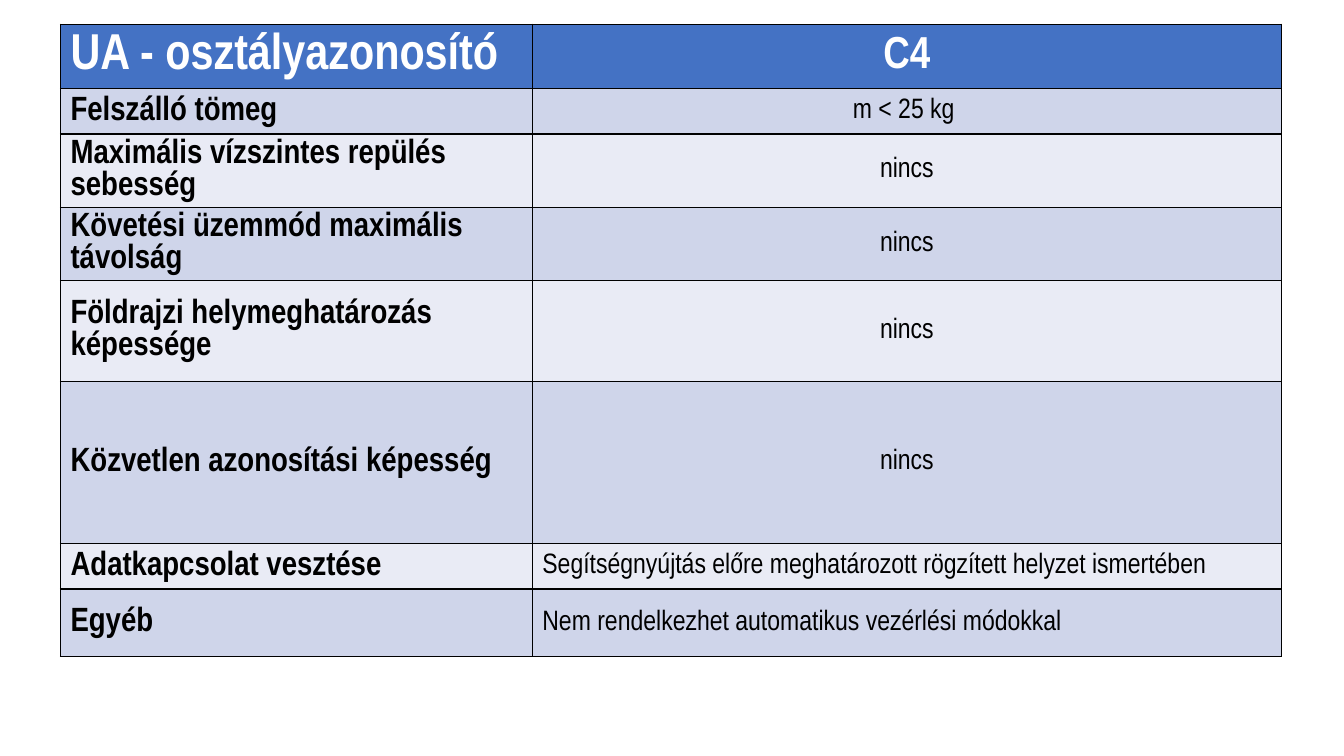
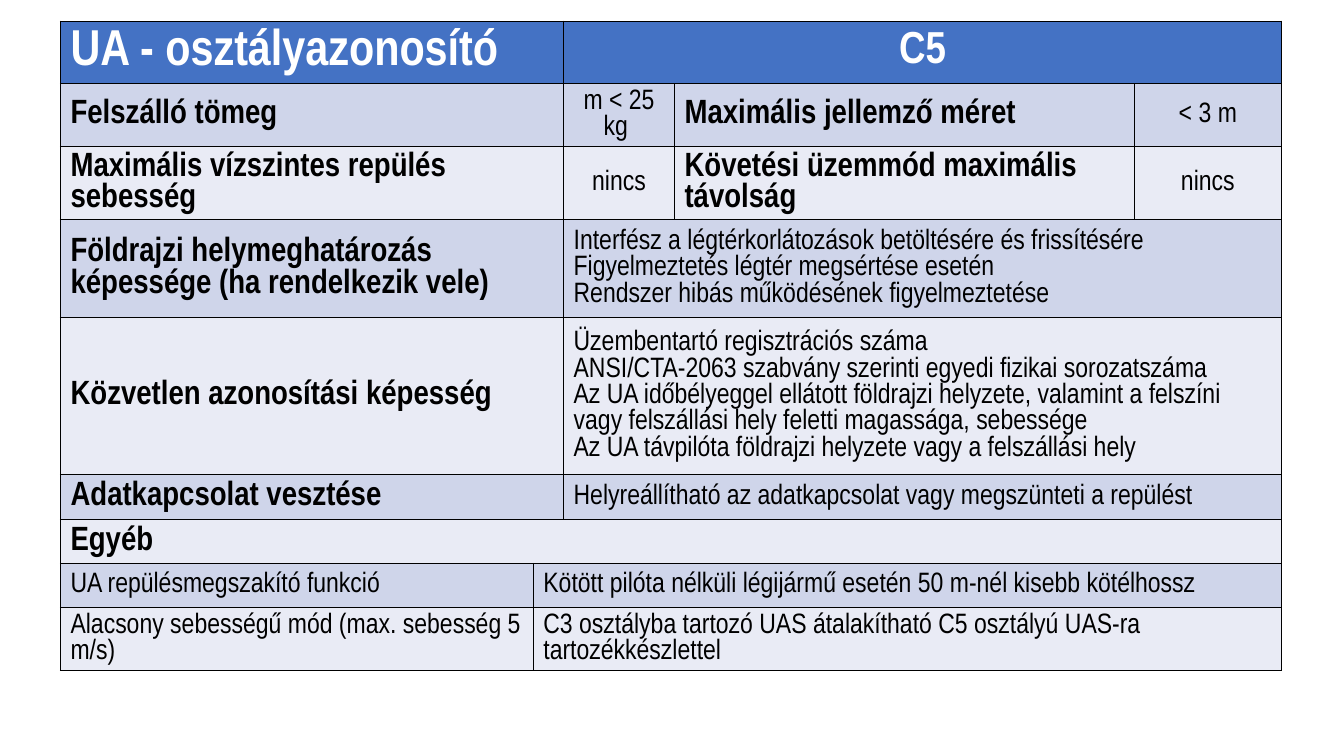
"""Build two slides that tabulate the requirements of drone classes C4 and C5."""
from lxml import etree
from pptx import Presentation
from pptx import util as u
from pptx.dml.color import RGBColor
from pptx.enum import text
from pptx.oxml.ns import qn

FONT = "Arial Narrow"
WHITE = RGBColor(0xFF, 0xFF, 0xFF)
BLACK = RGBColor(0x00, 0x00, 0x00)
HEADER_BLUE = RGBColor(0x44, 0x72, 0xC4)
BANDS = (RGBColor(0xCF, 0xD5, 0xEA), RGBColor(0xE9, 0xEB, 0xF5))
LEFT, CENTER = text.PP_ALIGN.LEFT, text.PP_ALIGN.CENTER
TABLE_LEFT = 0.6

# style: size, bold, colour, alignment
STYLES = {
    "title": (36, True, WHITE, LEFT),
    "class": (32, True, WHITE, CENTER),
    "label": (24, True, BLACK, LEFT),
    "value": (20, False, BLACK, CENTER),
    "detail": (20, False, BLACK, LEFT),
}

TITLE = "UA - osztályazonosító"
MASS = "Felszálló tömeg"
MASS_LIMIT = "m < 25 kg "
SPEED = "Maximális vízszintes repülés sebesség"
FOLLOW = "Követési üzemmód maximális távolság"
POSITION = "Földrajzi helymeghatározás képessége"
REMOTE_ID = "Közvetlen azonosítási képesség"
LINK_LOSS = "Adatkapcsolat vesztése"
OTHER = "Egyéb"
NONE = "nincs"

# row: height, then cells of (columns spanned, style, lines)
TABLES = [
    {
        "top": 0.24,
        "columns": (4.68, 7.43),
        "rows": [
            (0.64, (1, "title", TITLE), (1, "class", "C4")),
            (0.45, (1, "label", MASS), (1, "value", MASS_LIMIT)),
            (0.45, (1, "label", SPEED), (1, "value", NONE)),
            (0.45, (1, "label", FOLLOW), (1, "value", NONE)),
            (1, (1, "label", POSITION), (1, "value", NONE)),
            (1.61, (1, "label", REMOTE_ID), (1, "value", NONE)),
            (0.45, (1, "label", LINK_LOSS),
             (1, "detail", "Segítségnyújtás előre meghatározott rögzített helyzet ismertében")),
            (0.67, (1, "label", OTHER),
             (1, "detail", "Nem rendelkezhet automatikus vezérlési módokkal")),
        ],
    },
    {
        "top": 0.21,
        "columns": (4.69, 0.3, 1.1, 4.56, 1.46),
        "rows": [
            (0.62, (2, "title", TITLE), (3, "class", "C5")),
            (0.44, (2, "label", MASS), (1, "value", MASS_LIMIT),
             (1, "label", "Maximális jellemző méret"), (1, "value", "< 3 m")),
            (0.44, (2, "label", SPEED), (1, "value", NONE),
             (1, "label", FOLLOW), (1, "value", NONE)),
            (0.97, (2, "label", POSITION + " (ha rendelkezik vele)"),
             (3, "detail",
              "Interfész a légtérkorlátozások betöltésére és frissítésére\n"
              "Figyelmeztetés légtér megsértése esetén\n"
              "Rendszer hibás működésének figyelmeztetése")),
            (1.56, (2, "label", REMOTE_ID),
             (3, "detail",
              "Üzembentartó regisztrációs száma\n"
              "ANSI/CTA-2063 szabvány szerinti egyedi fizikai sorozatszáma\n"
              "Az UA időbélyeggel ellátott földrajzi helyzete, valamint a felszíni "
              "vagy felszállási hely feletti magassága, sebessége\n"
              "Az UA távpilóta földrajzi helyzete vagy a felszállási hely")),
            (0.44, (2, "label", LINK_LOSS),
             (3, "detail", "Helyreállítható az adatkapcsolat vagy megszünteti a repülést")),
            (0.44, (5, "label", OTHER)),
            (0.44, (1, "detail", "UA repülésmegszakító funkció"),
             (4, "detail", "Kötött pilóta nélküli légijármű esetén 50 m-nél kisebb kötélhossz")),
            (0.44, (1, "detail", "Alacsony sebességű mód (max. sebesség 5 m/s)"),
             (4, "detail",
              "C3 osztályba tartozó UAS átalakítható C5 osztályú UAS-ra tartozékkészlettel")),
        ],
    },
]


def paint_cell(cell, colour):
    cell.fill.solid()
    cell.fill.fore_color.rgb = colour
    properties = cell._tc.get_or_add_tcPr()
    for index, side in enumerate(("lnL", "lnR", "lnT", "lnB")):
        line = etree.Element(qn(f"a:{side}"), w=str(u.Pt(1)))
        fill = etree.SubElement(line, qn("a:solidFill"))
        etree.SubElement(fill, qn("a:srgbClr"), val=str(BLACK))
        properties.insert(index, line)


def write_cell(cell, style, content):
    size, bold, colour, alignment = STYLES[style]
    cell.vertical_anchor = text.MSO_ANCHOR.MIDDLE
    cell.text_frame.text = content
    for para in cell.text_frame.paragraphs:
        para.alignment = alignment
        for span in para.runs:
            span.font.name = FONT
            span.font.size = u.Pt(size)
            span.font.bold = bold
            span.font.color.rgb = colour


def add_class_table(page, top, columns, rows):
    frame = page.shapes.add_table(
        len(rows), len(columns), u.Inches(TABLE_LEFT), u.Inches(top),
        u.Inches(sum(columns)), u.Inches(sum(row[0] for row in rows)))
    table = frame.table
    for column, width in zip(table.columns, columns):
        column.width = u.Inches(width)
    for r, (height, *cells) in enumerate(rows):
        table.rows[r].height = u.Inches(height)
        for cell in table.rows[r].cells:
            paint_cell(cell, BANDS[(r - 1) % 2] if r else HEADER_BLUE)
        c = 0
        for width, style, content in cells:
            cell = table.cell(r, c)
            if width > 1:
                cell.merge(table.cell(r, c + width - 1))
            write_cell(cell, style, content)
            c += width


def main():
    deck = Presentation()
    deck.slide_width, deck.slide_height = u.Inches(13.33), u.Inches(7.5)
    for content in TABLES:
        page = deck.slides.add_slide(deck.slide_layouts[6])
        add_class_table(page, **content)
    deck.save("out.pptx")


if __name__ == "__main__":
    main()
